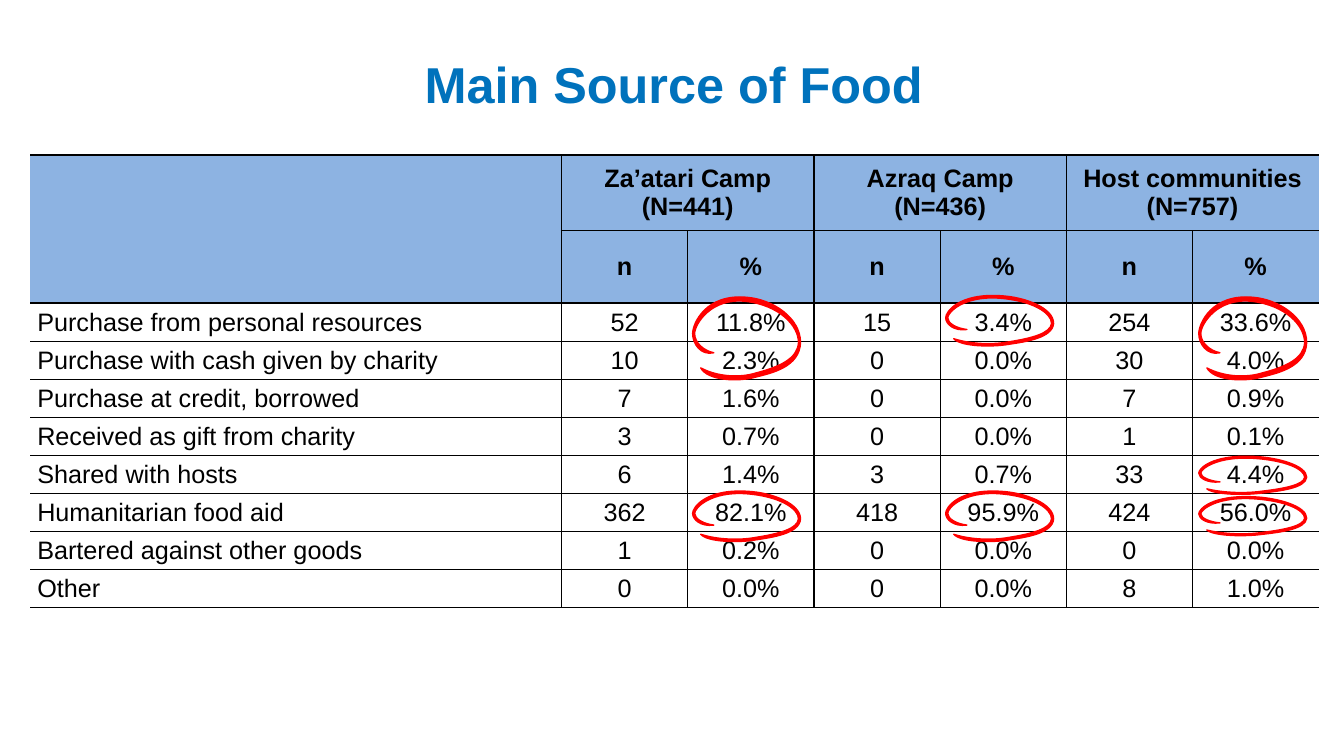
from dataclasses import dataclass

from lxml.etree import SubElement
from pptx import Presentation
from pptx.dml.color import RGBColor
from pptx.enum.text import MSO_ANCHOR as Anchor, MSO_AUTO_SIZE as AutoSize, PP_ALIGN as Align
from pptx.oxml.ns import qn
from pptx.util import Inches, Pt


@dataclass(frozen=True)
class Theme:
    font: str = "Arial"
    title_color: str = "0072BC"
    text_color: str = "000000"
    header_fill: str = "8DB3E2"
    ring_color: str = "FF0000"
    title_size: float = 36
    table_size: float = 18
    thin: float = 1
    thick: float = 1.5


@dataclass(frozen=True)
class Ring:
    """A hand-drawn ring around percentages; group counts the column pairs."""
    group: int
    top: float
    height: float


THEME = Theme()

# Table content
GROUPS = ["Za’atari Camp\n(N=441)", "Azraq Camp\n(N=436)", "Host communities (N=757)"]
SOURCES = [
    ("Purchase from personal resources", "52", "11.8%", "15", "3.4%", "254", "33.6%"),
    ("Purchase with cash given by charity", "10", "2.3%", "0", "0.0%", "30", "4.0%"),
    ("Purchase at credit, borrowed", "7", "1.6%", "0", "0.0%", "7", "0.9%"),
    ("Received as gift from charity", "3", "0.7%", "0", "0.0%", "1", "0.1%"),
    ("Shared with hosts", "6", "1.4%", "3", "0.7%", "33", "4.4%"),
    ("Humanitarian food aid", "362", "82.1%", "418", "95.9%", "424", "56.0%"),
    ("Bartered against other goods", "1", "0.2%", "0", "0.0%", "0", "0.0%"),
    ("Other", "0", "0.0%", "0", "0.0%", "8", "1.0%"),
]

# Table layout, in inches
LEFT, TOP, WIDTH, HEIGHT = 0.3, 1.54, 12.78, 4.49
LABEL_WIDTH = 5.27
HEADER_HEIGHTS = [0.75, 0.72]
HEADER_ROWS = len(HEADER_HEIGHTS)
NO_STYLE = "{2D5ABB26-0587-4C30-8999-92F81FD0307C}"

# Rings: the outline is a start point and cubic curves, in hundredths of an inch
RINGS = [Ring(0, 2.91, 0.87), Ring(1, 4.85, 0.53), Ring(0, 4.85, 0.53), Ring(1, 2.91, 0.53),
         Ring(2, 4.91, 0.41), Ring(2, 4.51, 0.4), Ring(2, 2.91, 0.87)]
RING_LEFT, RING_PITCH = 6.87, 2.51
OUTLINE_HEIGHT = 0.87
OUTLINE_START = (8, 74)
OUTLINE_CURVES = [
    ((25, 83), (47, 84), (63, 79)),
    ((86, 73), (104, 65), (105, 49)),
    ((105, 32), (86, 12), (53, 8)),
    ((18, 4), (2, 31), (2, 40)),
    ((2, 49), (11, 57), (21, 59)),
    ((8, 62), (0, 50), (0, 40)),
    ((0, 30), (13, 0), (54, 4)),
    ((79, 6), (107, 24), (107, 49)),
    ((106, 73), (79, 79), (63, 83)),
    ((46, 88), (15, 87), (8, 74)),
]


def style_font(font, size: float, color: str, bold: bool) -> None:
    font.name = THEME.font
    font.size = Pt(size)
    font.bold = bold
    font.color.rgb = RGBColor.from_string(color)


def add_title(slide, wording: str) -> None:
    title = slide.shapes.title
    title.left, title.top = Inches(0.3), Inches(0.3)
    title.width, title.height = Inches(12.77), Inches(0.84)
    frame = title.text_frame
    frame.text = wording
    frame.auto_size = AutoSize.NONE
    frame.vertical_anchor = Anchor.BOTTOM
    frame.margin_left = frame.margin_right = frame.margin_top = frame.margin_bottom = 0
    heading = frame.paragraphs[0]
    heading.alignment = Align.CENTER
    heading.line_spacing = 0.9
    style_font(heading.runs[0].font, THEME.title_size, THEME.title_color, True)


def set_borders(cell, weights: dict[str, float]) -> None:
    properties = cell._tc.get_or_add_tcPr()
    for position, (side, weight) in enumerate(weights.items()):
        line = SubElement(properties, qn(f"a:ln{side}"), w=str(Pt(weight)))
        if weight:
            fill = SubElement(line, qn("a:solidFill"))
            SubElement(fill, qn("a:srgbClr"), val=THEME.text_color)
        else:
            SubElement(line, qn("a:noFill"))
        properties.insert(position, line)


def fill_cell(cell, wording: str, header: bool, align: Align) -> None:
    cell.vertical_anchor = Anchor.MIDDLE
    cell.margin_left = cell.margin_right = Inches(0.07)
    cell.margin_top = cell.margin_bottom = 0
    if wording:
        cell.text_frame.text = wording
        for paragraph in cell.text_frame.paragraphs:
            paragraph.alignment = align
            style_font(paragraph.runs[0].font, THEME.table_size, THEME.text_color, header)
    if header:
        cell.fill.solid()
        cell.fill.fore_color.rgb = RGBColor.from_string(THEME.header_fill)
    else:
        cell.fill.background()


def add_food_table(slide) -> None:
    group_row = [""] + [wording for group in GROUPS for wording in (group, "")]
    rows = [group_row, ["", *["n", "%"] * len(GROUPS)], *SOURCES]
    row_count, column_count = len(rows), len(group_row)
    table = slide.shapes.add_table(row_count, column_count, Inches(LEFT), Inches(TOP),
                                   Inches(WIDTH), Inches(HEIGHT)).table
    table.first_row = table.horz_banding = False
    table._tbl.tblPr.find(qn("a:tableStyleId")).text = NO_STYLE

    # Column widths and row heights
    value_width = (WIDTH - LABEL_WIDTH) / (column_count - 1)
    for index, column in enumerate(table.columns):
        column.width = Inches(value_width if index else LABEL_WIDTH)
    body_height = (HEIGHT - sum(HEADER_HEIGHTS)) / len(SOURCES)
    for row, height in zip(table.rows, HEADER_HEIGHTS + [body_height] * len(SOURCES)):
        row.height = Inches(height)

    # Header spans
    table.cell(0, 0).merge(table.cell(1, 0))
    for start in range(1, column_count, 2):
        table.cell(0, start).merge(table.cell(0, start + 1))

    # Wording and rules
    heavy_rules = {0, HEADER_ROWS, row_count}
    for r, row in enumerate(rows):
        for c, wording in enumerate(row):
            cell = table.cell(r, c)
            fill_cell(cell, wording, r < HEADER_ROWS, Align.CENTER if c else Align.LEFT)
            if cell.is_spanned:
                continue
            right, bottom = c + cell.span_width, r + cell.span_height
            set_borders(cell, {
                "L": THEME.thin if c else 0,
                "R": THEME.thin if right < column_count else 0,
                "T": THEME.thick if r in heavy_rules else THEME.thin,
                "B": THEME.thick if bottom in heavy_rules else THEME.thin,
            })


def bend_segments(outline) -> None:
    """Turn every three straight segments into one cubic curve."""
    segments = list(outline._element.iter(qn("a:lnTo")))
    for first, second, end in zip(segments[::3], segments[1::3], segments[2::3]):
        first.tag = qn("a:cubicBezTo")
        for segment in (second, end):
            first.append(segment[0])
            segment.getparent().remove(segment)


def add_ring(slide, ring: Ring) -> None:
    left = RING_LEFT + ring.group * RING_PITCH
    stretch = ring.height / OUTLINE_HEIGHT
    outline_points = [OUTLINE_START, *(point for curve in OUTLINE_CURVES for point in curve)]
    points = [(Inches(left + x / 100), Inches(ring.top + y / 100 * stretch))
              for x, y in outline_points]
    builder = slide.shapes.build_freeform(*points[0])
    builder.add_line_segments(points[1:], close=True)
    outline = builder.convert_to_shape()
    bend_segments(outline)
    outline.shadow.inherit = False
    outline.fill.solid()
    outline.fill.fore_color.rgb = RGBColor.from_string(THEME.ring_color)
    outline.line.color.rgb = RGBColor.from_string(THEME.ring_color)
    outline.line.width = Pt(THEME.thin)


def main() -> None:
    deck = Presentation()
    deck.slide_width, deck.slide_height = Inches(13.33), Inches(7.5)
    slide = deck.slides.add_slide(deck.slide_layouts[5])
    add_food_table(slide)
    add_title(slide, "Main Source of Food")
    for ring in RINGS:
        add_ring(slide, ring)
    deck.save("out.pptx")


if __name__ == "__main__":
    main()
